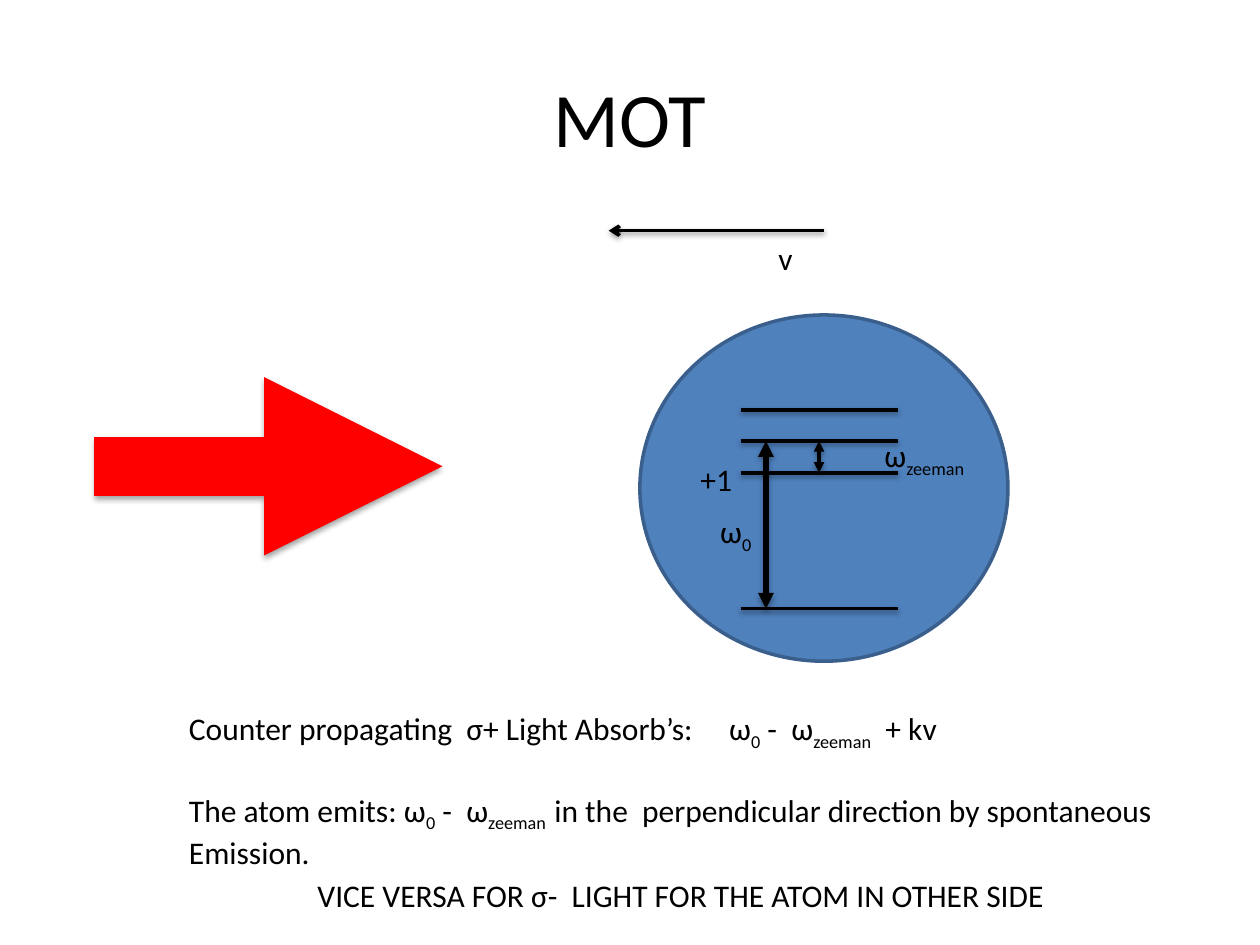
from lxml import etree
from pptx import Presentation
from pptx.dml.color import RGBColor
from pptx.enum.shapes import MSO_CONNECTOR, MSO_SHAPE
from pptx.enum.text import MSO_ANCHOR, PP_ALIGN
from pptx.oxml.ns import qn
from pptx.util import Cm, Pt

STRAIGHT = MSO_CONNECTOR.STRAIGHT
OVAL = MSO_SHAPE.OVAL
LEFT, CENTER = PP_ALIGN.LEFT, PP_ALIGN.CENTER
TOP, MIDDLE = MSO_ANCHOR.TOP, MSO_ANCHOR.MIDDLE

BLACK = RGBColor(0x00, 0x00, 0x00)
RED = RGBColor(0xFF, 0x00, 0x00)
ATOM_FILL = RGBColor(0x4F, 0x81, 0xBD)
ATOM_LINE = RGBColor(0x3A, 0x5F, 0x8C)

FONT = "Calibri"
ATOM = (12.9, 6.35, 7.42, 6.98)
LEVEL_LEFT, LEVEL_RIGHT = 14.94, 18.11
GROUND, LOWER, MIDDLE_LEVEL, UPPER = 12.27, 9.53, 8.89, 8.26
FORMULA_TAB = 10.89

# Text between bars is set as a subscript.
TITLE = "MOT"
EXPLANATION = [
    "Counter propagating  σ+ Light Absorb’s:\tω|0| -  ω|zeeman|  + kv",
    "The atom emits: ω|0| -  ω|zeeman  |in the  perpendicular direction by spontaneous",
    "Emission.",
]
LABELS = [
    ("+1", (13.87, 9.14, 1.17, 1.02)),
    ("v", (15.44, 4.7, 0.81, 1.02)),
    ("VICE VERSA FOR σ-  LIGHT FOR THE ATOM IN OTHER SIDE", (6.15, 17.53, 15.47, 1.02)),
    ("ω|0", (14.27, 10.19, 1.17, 1.02)),
    ("ω|zeeman", (17.58, 8.66, 2.41, 1.02)),
]
ARROWS = [
    ((15.44, GROUND), (15.44, MIDDLE_LEVEL), dict(width=3, head="triangle", tail="triangle")),
    ((1.9, 9.4), (8.92, 9.4), dict(width=34, color=RED, tail="triangle")),
    ((16.61, 4.65), (12.27, 4.65), dict(tail="arrow")),
    ((16.51, MIDDLE_LEVEL), (16.51, LOWER), dict(head="triangle", tail="triangle")),
]


def add_text(page, lines, place, size=18, align=LEFT, anchor=TOP, wrap=False):
    box = page.shapes.add_textbox(*map(Cm, place))
    frame = box.text_frame
    frame.word_wrap = wrap
    frame.vertical_anchor = anchor
    for index, line in enumerate(lines):
        para = frame.paragraphs[0] if index == 0 else frame.add_paragraph()
        para.alignment = align
        for position, part in enumerate(line.split("|")):
            span = para.add_run()
            span.text = part
            span.font.name = FONT
            span.font.size = Pt(size)
            span.font.color.rgb = BLACK
            if position % 2:
                span.font._element.set("baseline", "-25000")
    return frame


def add_tab_stop(para, position):
    stops = etree.SubElement(para._p.get_or_add_pPr(), qn("a:tabLst"))
    etree.SubElement(stops, qn("a:tab"), pos=str(Cm(position)), algn="l")


def add_line(page, start, end, width=2, color=BLACK, head=None, tail=None):
    line = page.shapes.add_connector(STRAIGHT, *map(Cm, start + end))
    line.line.width = Pt(width)
    line.line.color.rgb = color
    outline = line.line._get_or_add_ln()
    for tag, kind in (("a:headEnd", head), ("a:tailEnd", tail)):
        if kind:
            etree.SubElement(outline, qn(tag), type=kind)
    thick = width > 2
    effects = etree.SubElement(line._element.spPr, qn("a:effectLst"))
    shadow = etree.SubElement(
        effects, qn("a:outerShdw"), blurRad=str(Pt(3.1)),
        dist=str(Pt(1.8 if thick else 1.6)), dir="5400000", rotWithShape="0")
    shade = etree.SubElement(shadow, qn("a:srgbClr"), val=str(BLACK))
    etree.SubElement(shade, qn("a:alpha"), val="35000" if thick else "38000")


def main():
    deck = Presentation()
    deck.slide_width, deck.slide_height = Cm(25.4), Cm(19.05)
    page = deck.slides.add_slide(deck.slide_layouts[6])

    add_text(page, [TITLE], (1.27, 0.76, 22.86, 3.18),
             size=44, align=CENTER, anchor=MIDDLE, wrap=True)

    atom = page.shapes.add_shape(OVAL, *map(Cm, ATOM))
    atom.shadow.inherit = False
    atom.fill.solid()
    atom.fill.fore_color.rgb = ATOM_FILL
    atom.line.color.rgb = ATOM_LINE
    atom.line.width = Pt(2)

    for level in (GROUND, LOWER, MIDDLE_LEVEL, UPPER):
        add_line(page, (LEVEL_LEFT, level), (LEVEL_RIGHT, level))
    for start, end, style in ARROWS:
        add_line(page, start, end, **style)

    explanation = add_text(page, EXPLANATION, (3.56, 14.17, 20.4, 3.33))
    absorbed, emitted = explanation.paragraphs[:2]
    add_tab_stop(absorbed, FORMULA_TAB)
    emitted.space_before = Pt(22)
    for text, place in LABELS:
        add_text(page, [text], place)

    deck.save("out.pptx")


if __name__ == "__main__":
    main()
